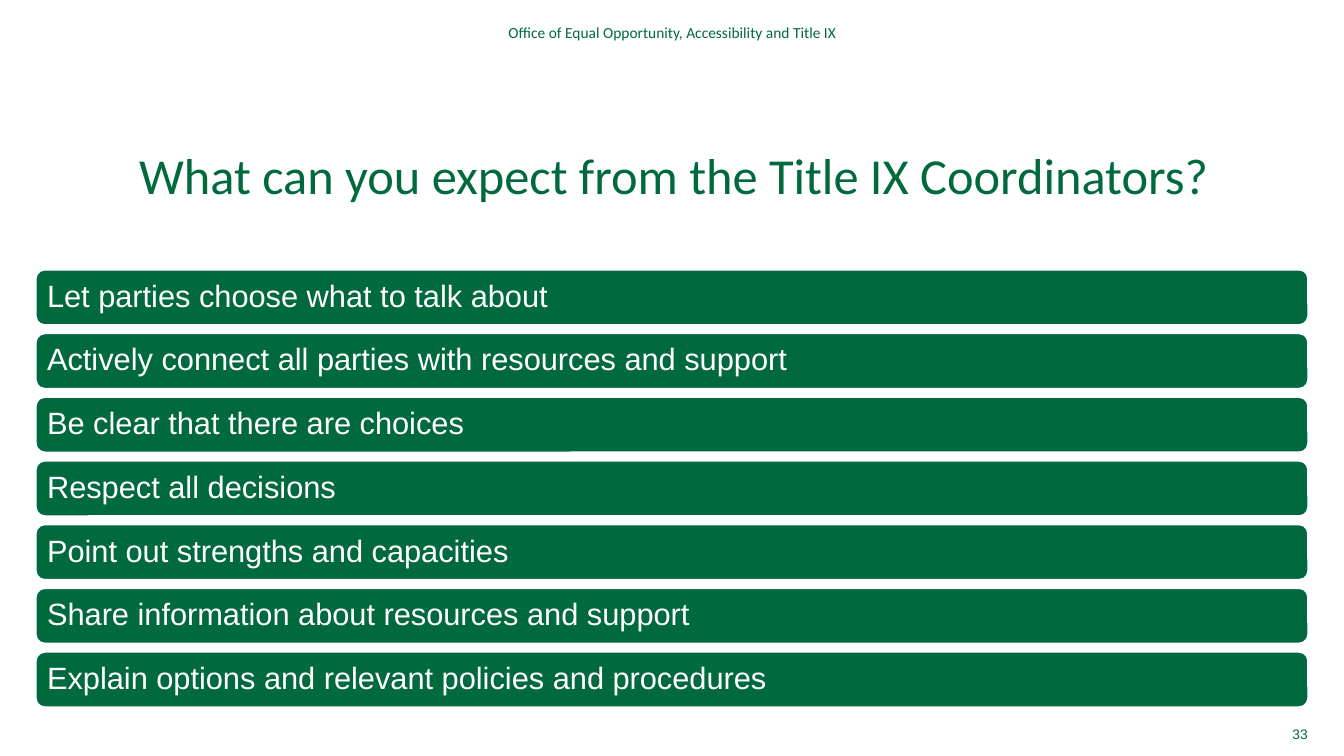
from pptx import Presentation
from pptx.dml.color import RGBColor
from pptx.enum.shapes import MSO_SHAPE
from pptx.enum.text import MSO_ANCHOR, PP_ALIGN
from pptx.util import Inches, Pt

GREEN, WHITE = "00693E", "FFFFFF"
OFFICE = "Office of Equal Opportunity, Accessibility and Title IX"
TITLE = "What can you expect from the Title IX Coordinators?"
PAGE_NUMBER = "33"
EXPECTATIONS = [
    "Let parties choose what to talk about",
    "Actively connect all parties with resources and support",
    "Be clear that there are choices",
    "Respect all decisions",
    "Point out strengths and capacities",
    "Share information about resources and support",
    "Explain options and relevant policies and procedures",
]
BAR_LEFT, BAR_TOP, BAR_WIDTH, BAR_HEIGHT = 0.35, 2.67, 12.63, 0.56
BAR_PITCH = 0.632


def color(value):
    return RGBColor.from_string(value)


def write(shape, text, size, font, ink, align, anchor, spacing=1.0, inset=0):
    frame = shape.text_frame
    frame.word_wrap = True
    frame.vertical_anchor = anchor
    frame.margin_left = frame.margin_right = Inches(inset)
    frame.margin_top = frame.margin_bottom = 0
    paragraph = frame.paragraphs[0]
    paragraph.alignment = align
    paragraph.line_spacing = spacing
    run = paragraph.add_run()
    run.text = text
    run.font.size = Pt(size)
    run.font.name = font
    run.font.color.rgb = color(ink)


def add_label(slide, box, *style):
    write(slide.shapes.add_textbox(*map(Inches, box)), *style)


def add_bar(slide, index, expectation):
    top = BAR_TOP + index * BAR_PITCH
    bar = slide.shapes.add_shape(
        MSO_SHAPE.ROUNDED_RECTANGLE,
        *map(Inches, (BAR_LEFT, top, BAR_WIDTH, BAR_HEIGHT)))
    bar.shadow.inherit = False
    bar.fill.solid()
    bar.fill.fore_color.rgb = color(GREEN)
    bar.line.color.rgb = color(WHITE)
    bar.line.width = Pt(2)
    write(bar, expectation, 22, "Arial", WHITE, PP_ALIGN.LEFT,
          MSO_ANCHOR.MIDDLE, 0.9, 0.09)


def main():
    deck = Presentation()
    deck.slide_width, deck.slide_height = Inches(13.33), Inches(7.5)
    slide = deck.slides.add_slide(deck.slide_layouts[6])
    for index, expectation in enumerate(EXPECTATIONS):
        add_bar(slide, index, expectation)
    add_label(slide, (0.37, 1.52, 12.63, 1.01), TITLE, 36, "Calibri", GREEN,
              PP_ALIGN.CENTER, MSO_ANCHOR.TOP, 0.85)
    add_label(slide, (2.61, 0.2, 8.12, 0.24), OFFICE, 11, "Calibri", GREEN,
              PP_ALIGN.CENTER, MSO_ANCHOR.MIDDLE)
    add_label(slide, (12.4, 7.16, 0.57, 0.24), PAGE_NUMBER, 9.8, "Arial", GREEN,
              PP_ALIGN.RIGHT, MSO_ANCHOR.MIDDLE)
    deck.save("out.pptx")


if __name__ == "__main__":
    main()
